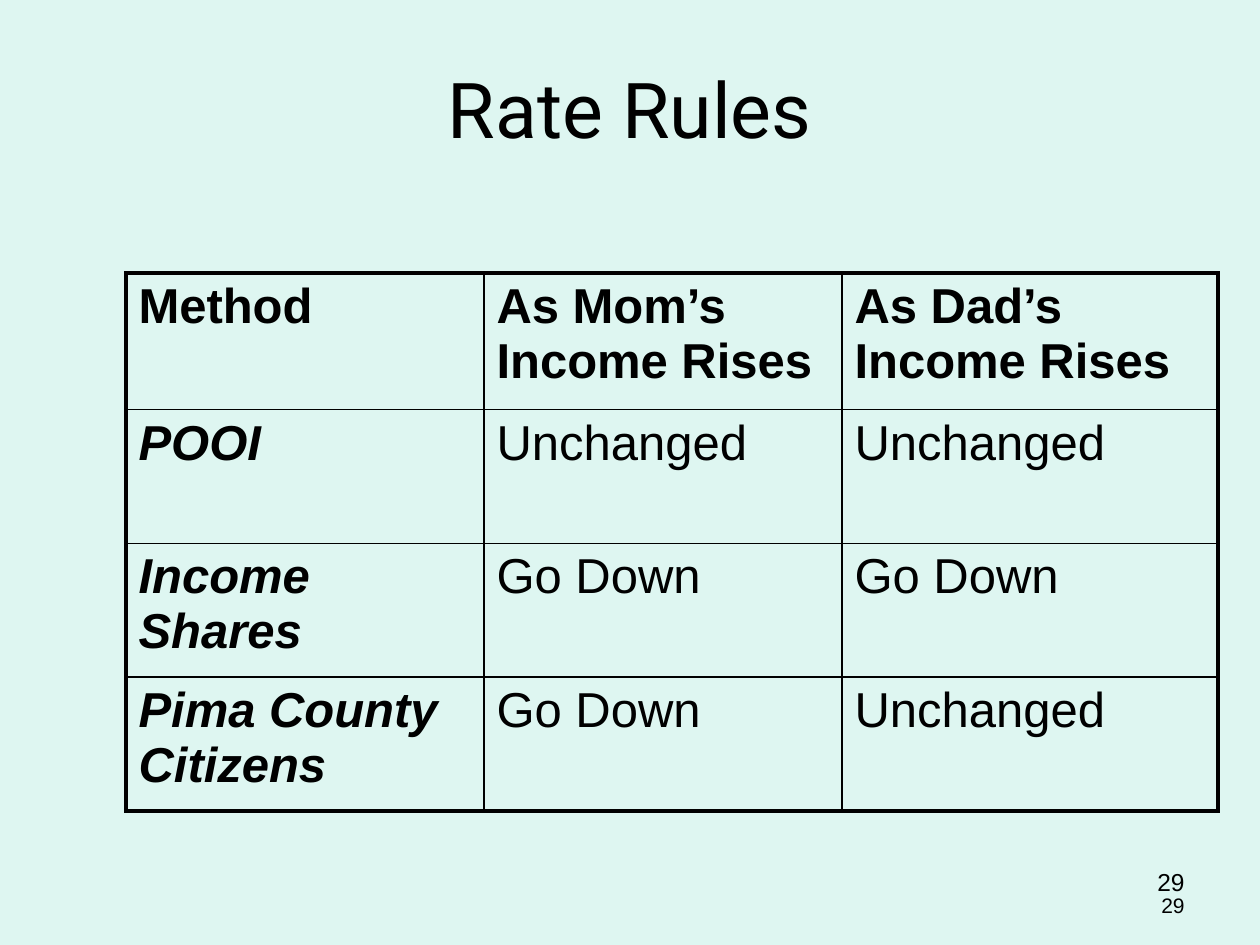
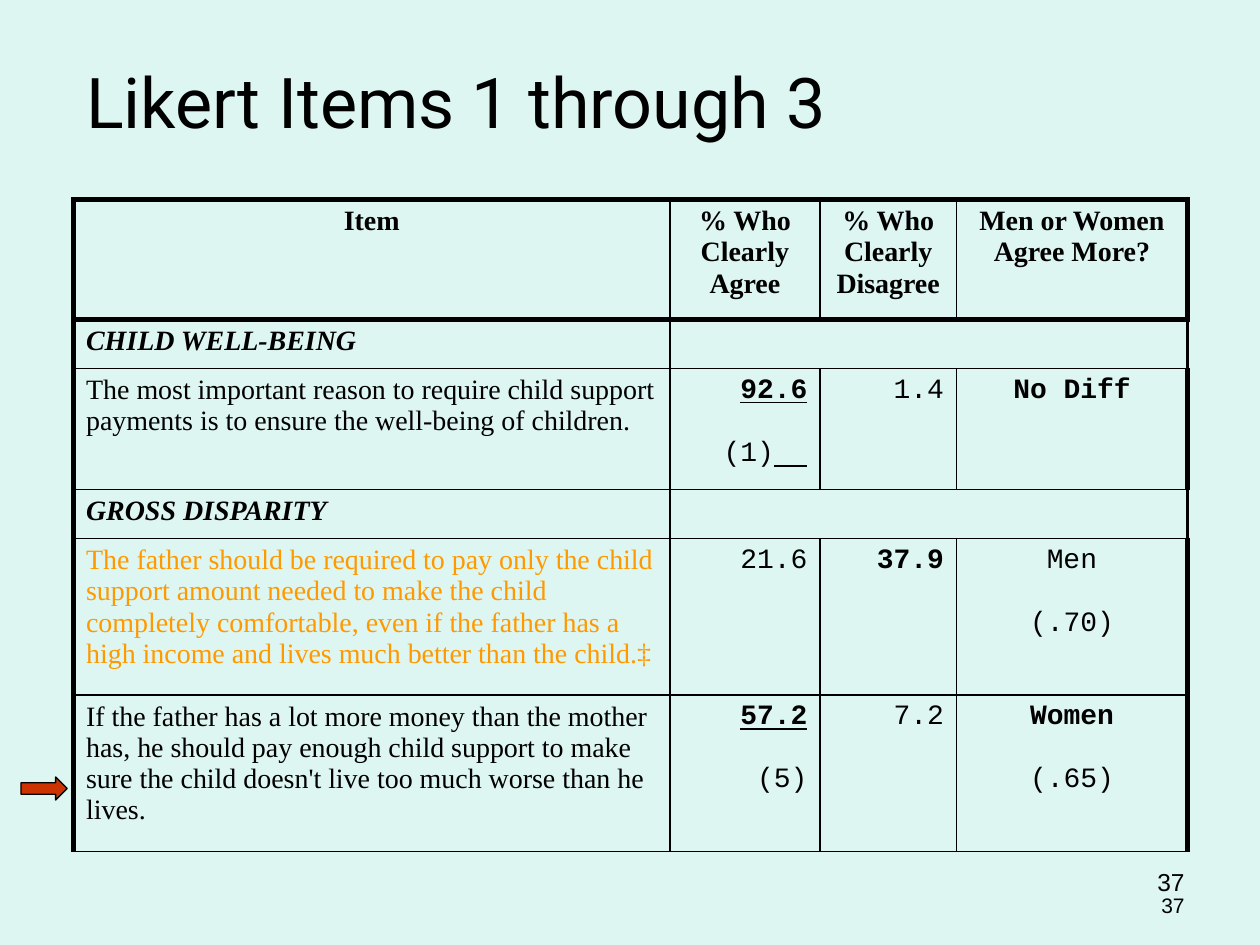
"""Build two table slides on child support rate rules and Likert items."""
from dataclasses import dataclass, replace
from typing import NamedTuple

from lxml.etree import SubElement
from pptx import Presentation
from pptx.dml.color import RGBColor
from pptx.enum.shapes import MSO_SHAPE as Preset
from pptx.enum.text import MSO_ANCHOR as Anchor
from pptx.enum.text import MSO_AUTO_SIZE as AutoSize
from pptx.enum.text import PP_ALIGN as Align
from pptx.oxml.ns import qn
from pptx.util import Emu, Inches, Pt

GRID_COLUMNS, GRID_ROWS = 120, 90
SLIDE_WIDTH, SLIDE_HEIGHT = Inches(10), Inches(7.5)
MINT, INK, ORANGE, RUST = "DEF6F1", "000000", "FF9900", "CC3300"
THIN, MEDIUM, THICK = 1, 2.25, 3


class Area(NamedTuple):
    """A place on the slide in grid columns and rows."""
    left: float
    top: float
    width: float
    height: float


@dataclass(frozen=True)
class Face:
    """The look of a run."""
    font: str
    size: float
    bold: bool = False
    italic: bool = False
    underline: bool = False
    colour: str = INK


class Words(NamedTuple):
    """A run of text and its look."""
    text: str
    face: Face


class Entry(NamedTuple):
    """A table cell: its lines of runs, their alignment and gap."""
    lines: list[list[Words]]
    align: Align = Align.LEFT
    gap: float = 0


class Frame(NamedTuple):
    """The widths of a table's outer borders and of the rule under its header."""
    left: float
    top: float
    right: float
    bottom: float
    header: float


class Grid(NamedTuple):
    """A table's place, column widths, row heights, borders and entries."""
    corner: tuple[float, float]
    columns: list[float]
    rows: list[float]
    frame: Frame
    entries: list[list[Entry]]


class Heading(NamedTuple):
    """A slide's title."""
    text: str
    area: Area
    size: float
    align: Align
    anchor: Anchor


class Folio(NamedTuple):
    """One of the two page number boxes."""
    area: Area
    size: float
    anchor: Anchor


FOLIOS = (
    Folio(Area(86, 82, 28, 6.2), 14, Anchor.TOP),
    Folio(Area(86, 82, 28, 6), 12, Anchor.BOTTOM),
)

ARIAL = Face("Arial", 28)
ARIAL_BOLD = replace(ARIAL, bold=True)
ARIAL_METHOD = replace(ARIAL_BOLD, italic=True)
TIMES = Face("Times New Roman", 16)
TIMES_BOLD = replace(TIMES, bold=True)
TIMES_SECTION = replace(TIMES_BOLD, italic=True)
TIMES_ORANGE = replace(TIMES, colour=ORANGE)
COURIER = Face("Courier New", 16)
COURIER_BOLD = replace(COURIER, bold=True)
COURIER_KEY = replace(COURIER_BOLD, underline=True)


def across(columns: float) -> Emu:
    """Turn grid columns into a length."""
    return Emu(round(SLIDE_WIDTH * columns / GRID_COLUMNS))


def down(rows: float) -> Emu:
    """Turn grid rows into a length."""
    return Emu(round(SLIDE_HEIGHT * rows / GRID_ROWS))


def place(area: Area) -> tuple[Emu, Emu, Emu, Emu]:
    """Turn an area into left, top, width and height."""
    return across(area.left), down(area.top), across(area.width), down(area.height)


def paint(colour_format, colour: str) -> None:
    """Set a colour from a hex string."""
    colour_format.rgb = RGBColor.from_string(colour)


def fill_with(fill, colour: str) -> None:
    """Make a fill solid."""
    fill.solid()
    paint(fill.fore_color, colour)


def add_words(paragraph, words: Words) -> None:
    """Add one run with its look."""
    run = paragraph.add_run()
    run.text = words.text
    font, face = run.font, words.face
    font.name, font.size = face.font, Pt(face.size)
    font.bold, font.italic, font.underline = face.bold, face.italic, face.underline
    paint(font.color, face.colour)


def plain(text: str, face: Face, align: Align = Align.LEFT) -> Entry:
    """Make an entry of a single run."""
    return Entry([[Words(text, face)]], align)


def stacked(align: Align, *lines: list[Words]) -> Entry:
    """Make an entry whose lines stand one line apart."""
    return Entry(list(lines), align, 18)


def add_heading(slide, heading: Heading) -> None:
    """Place and format the title placeholder."""
    title = slide.shapes.title
    title.left, title.top, title.width, title.height = place(heading.area)
    frame = title.text_frame
    frame.word_wrap, frame.auto_size = True, AutoSize.NONE
    frame.vertical_anchor = heading.anchor
    paragraph = frame.paragraphs[0]
    paragraph.alignment = heading.align
    add_words(paragraph, Words(heading.text, Face("Roboto", heading.size)))


def add_folios(slide, number: str) -> None:
    """Write the page number in both of its boxes."""
    for folio in FOLIOS:
        frame = slide.shapes.add_textbox(*place(folio.area)).text_frame
        frame.word_wrap, frame.vertical_anchor = True, folio.anchor
        paragraph = frame.paragraphs[0]
        paragraph.alignment = Align.RIGHT
        add_words(paragraph, Words(number, Face("Arial", folio.size)))


def draw_borders(cell, widths: dict[str, float]) -> None:
    """Draw the four borders of a cell."""
    properties = cell._tc.get_or_add_tcPr()
    for side, width in widths.items():
        line = SubElement(properties, qn(f"a:ln{side}"), w=str(Pt(width)))
        SubElement(SubElement(line, qn("a:solidFill")), qn("a:srgbClr"), val=INK)


def border_widths(grid: Grid, row: int, column: int) -> dict[str, float]:
    """Work out a cell's border widths from its place in the table."""
    frame, last_row, last_column = grid.frame, len(grid.rows) - 1, len(grid.columns) - 1
    is_section = len(grid.entries[row]) == 1
    outer_right = MEDIUM if is_section else frame.right
    top = {0: frame.top, 1: frame.header}.get(row, THIN)
    bottom = {0: frame.header, last_row: frame.bottom}.get(row, THIN)
    at_right = column == last_column or (is_section and column > 0)
    return {
        "L": frame.left if column == 0 else THIN,
        "R": outer_right if at_right else THIN,
        "T": top,
        "B": bottom,
    }


def write_entry(cell, entry: Entry) -> None:
    """Write an entry's lines into a cell."""
    frame = cell.text_frame
    for index, line in enumerate(entry.lines):
        paragraph = frame.add_paragraph() if index else frame.paragraphs[0]
        paragraph.alignment = entry.align
        if index:
            paragraph.space_before = Pt(entry.gap)
        for words in line:
            add_words(paragraph, words)


def add_grid(slide, grid: Grid) -> None:
    """Add a table; a row with one entry has its other cells merged."""
    area = Area(*grid.corner, sum(grid.columns), sum(grid.rows))
    table = slide.shapes.add_table(len(grid.rows), len(grid.columns), *place(area)).table
    table.first_row = table.horz_banding = False
    for column, width in zip(table.columns, grid.columns):
        column.width = across(width)
    for row, height in zip(table.rows, grid.rows):
        row.height = down(height)
    for row, entries in enumerate(grid.entries):
        for column in range(len(grid.columns)):
            cell = table.cell(row, column)
            draw_borders(cell, border_widths(grid, row, column))
            cell.fill.background()
            if column < len(entries):
                write_entry(cell, entries[column])
            else:
                cell.margin_top = cell.margin_bottom = 0
        if len(entries) == 1:
            table.cell(row, 1).merge(table.cell(row, len(grid.columns) - 1))


def add_pointer(slide, area: Area) -> None:
    """Add the arrow that points at a table row."""
    pointer = slide.shapes.add_shape(Preset.RIGHT_ARROW, *place(area))
    pointer.shadow.inherit = False
    fill_with(pointer.fill, RUST)
    paint(pointer.line.color, INK)
    pointer.line.width = Pt(0.75)


def add_page(deck, heading: Heading, number: str, grid: Grid):
    """Add a slide with its title, page numbers and table."""
    slide = deck.slides.add_slide(deck.slide_layouts[5])
    add_folios(slide, number)
    add_heading(slide, heading)
    add_grid(slide, grid)
    return slide


METHODS = [
    ("POOI", "Unchanged", "Unchanged"),
    ("Income Shares", "Go Down", "Go Down"),
    ("Pima County Citizens", "Go Down", "Unchanged"),
]
RATE_RULES = Grid(
    (12, 26), [34.1, 34.1, 35.8], [13] + [12.75] * 3,
    Frame(MEDIUM, MEDIUM, MEDIUM, MEDIUM, THIN),
    [[plain(text, ARIAL_BOLD) for text in ("Method", "As Mom’s Income Rises", "As Dad’s Income Rises")]]
    + [[plain(method, ARIAL_METHOD), plain(mom, ARIAL), plain(dad, ARIAL)] for method, mom, dad in METHODS],
)
LIKERT_HEADER = ("Item", "% Who Clearly Agree", "% Who Clearly Disagree", "Men or Women Agree More?")
LIKERT_ITEMS = Grid(
    (7, 19), [56.8, 14.3, 13, 22], [11.4, 4.7, 11.5, 4.7, 14.9, 14.9],
    Frame(THICK, THICK, THICK, THIN, THICK),
    [
        [plain(text, TIMES_BOLD, Align.CENTER) for text in LIKERT_HEADER],
        [plain("CHILD WELL-BEING", TIMES_SECTION)],
        [plain("The most important reason to require child support payments is to ensure "
               "the well-being of children.", TIMES),
         stacked(Align.RIGHT, [Words("92.6", COURIER_KEY)], [Words("(1)", COURIER), Words("  ", COURIER_KEY)]),
         plain("1.4", COURIER, Align.RIGHT),
         plain("No Diff", COURIER_BOLD, Align.CENTER)],
        [plain("GROSS DISPARITY", TIMES_SECTION)],
        [plain("The father should be required to pay only the child support amount needed to make "
               "the child completely comfortable, even if the father has a high income and lives "
               "much better than the child.‡", TIMES_ORANGE),
         plain("21.6", COURIER, Align.RIGHT),
         plain("37.9", COURIER_BOLD, Align.RIGHT),
         stacked(Align.CENTER, [Words("Men", COURIER)], [Words("(.70)", COURIER)])],
        [plain("If the father has a lot more money than the mother has, he should pay enough child "
               "support to make sure the child doesn't live too much worse than he lives.", TIMES),
         stacked(Align.RIGHT, [Words("57.2", COURIER_KEY)], [Words("(5)", COURIER)]),
         plain("7.2", COURIER, Align.RIGHT),
         stacked(Align.CENTER, [Words("Women", COURIER_BOLD)], [Words("(.65)", COURIER)])],
    ],
)


def main() -> None:
    """Build and save the deck."""
    deck = Presentation()
    deck.slide_width, deck.slide_height = SLIDE_WIDTH, SLIDE_HEIGHT
    fill_with(deck.slide_master.background.fill, MINT)
    rules = Heading("Rate Rules", Area(6, 5.25, 108, 10), 44, Align.CENTER, Anchor.BOTTOM)
    add_page(deck, rules, "29", RATE_RULES)
    likert = Heading("Likert Items 1 through 3", Area(7, 5, 110, 9.2), 40, Align.LEFT, Anchor.TOP)
    add_pointer(add_page(deck, likert, "37", LIKERT_ITEMS), Area(2, 74, 4.4, 2.2))
    deck.save("out.pptx")


if __name__ == "__main__":
    main()
